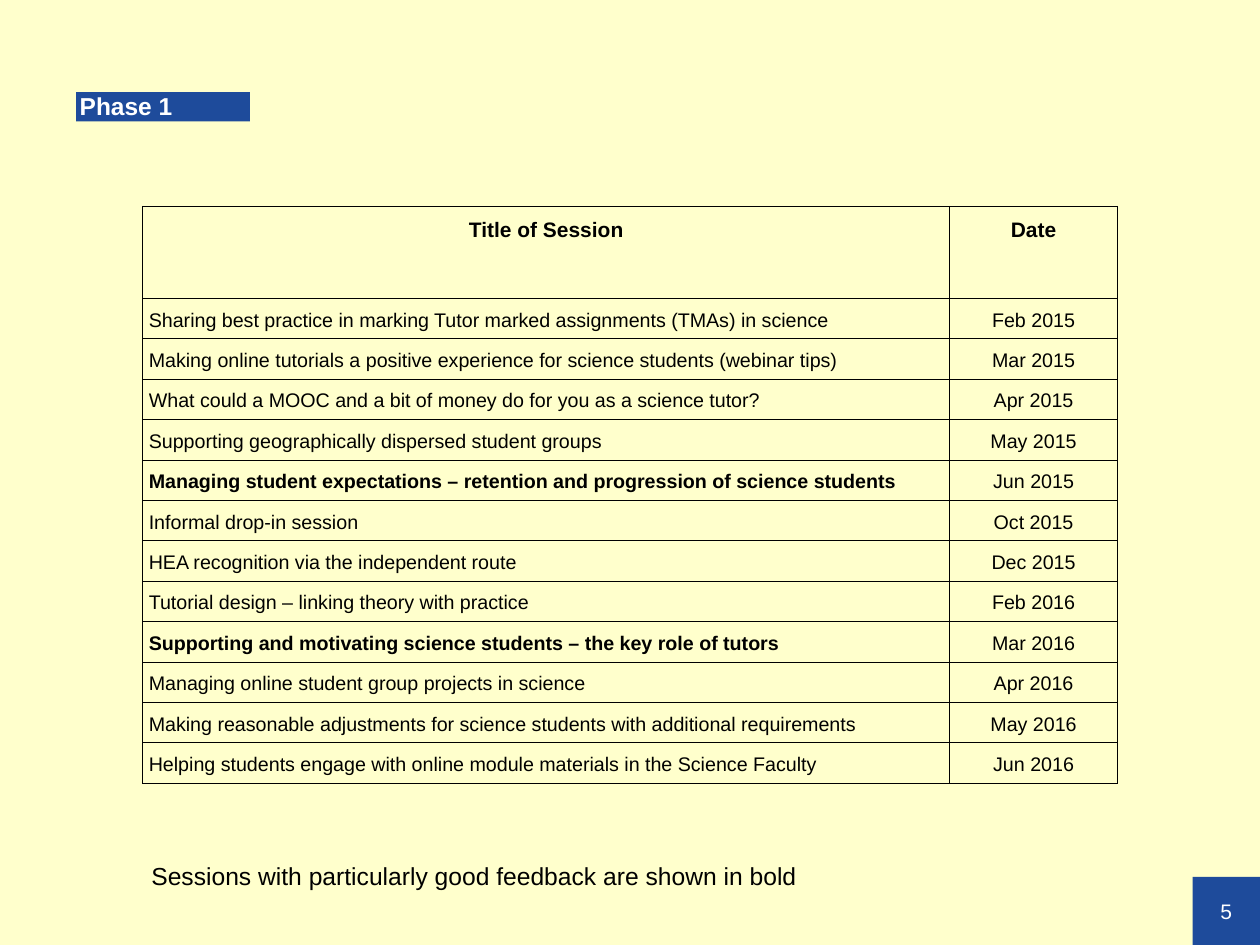
import dataclasses

import pptx
import pptx.dml.color
import pptx.enum.shapes
import pptx.enum.text
import pptx.oxml
import pptx.oxml.ns
import pptx.util

Inches = pptx.util.Inches
ALIGN = pptx.enum.text.PP_ALIGN
ANCHOR = pptx.enum.text.MSO_ANCHOR


@dataclasses.dataclass(frozen=True)
class Theme:
    font: str = "Arial"
    background: str = "FFFFCC"
    accent: str = "1E4B9B"
    light: str = "FFFFFF"
    dark: str = "000000"
    title_size: float = 19.9
    header_size: float = 17
    body_size: float = 16
    note_size: float = 20
    number_size: float = 17.1
    border_width: float = 1


THEME = Theme()

SESSIONS = [
    ("Sharing best practice in marking Tutor marked assignments (TMAs) in science", "Feb 2015", False),
    ("Making online tutorials a positive experience for science students (webinar tips)", "Mar 2015", False),
    ("What could a MOOC and a bit of money do for you as a science tutor?", "Apr 2015", False),
    ("Supporting geographically dispersed student groups", "May 2015", False),
    ("Managing student expectations – retention and progression of science students", "Jun 2015", True),
    ("Informal drop-in session", "Oct 2015", False),
    ("HEA recognition via the independent route", "Dec 2015", False),
    ("Tutorial design – linking theory with practice", "Feb 2016", False),
    ("Supporting and motivating science students – the key role of tutors", "Mar 2016", True),
    ("Managing online student group projects in science", "Apr 2016", False),
    ("Making reasonable adjustments for science students with additional requirements", "May 2016", False),
    ("Helping students engage with online module materials in the Science Faculty", "Jun 2016", False),
]


def rgb(value):
    return pptx.dml.color.RGBColor.from_string(value)


def set_text(frame, text, size, color=THEME.dark, bold=False, align=ALIGN.LEFT, spacing=1.0):
    paragraph = frame.paragraphs[0]
    paragraph.alignment = align
    paragraph.line_spacing = spacing
    run = paragraph.add_run()
    run.text = text
    run.font.name = THEME.font
    run.font.size = pptx.util.Pt(size)
    run.font.bold = bold
    run.font.color.rgb = rgb(color)


def set_margins(target, left=0, top=0, right=0, bottom=0):
    target.margin_left, target.margin_top = Inches(left), Inches(top)
    target.margin_right, target.margin_bottom = Inches(right), Inches(bottom)


def fill_solid(shape, color):
    shape.fill.solid()
    shape.fill.fore_color.rgb = rgb(color)


def add_borders(cell):
    properties = cell._tc.get_or_add_tcPr()
    width = pptx.util.Pt(THEME.border_width)
    for position, side in enumerate(("lnL", "lnR", "lnT", "lnB")):
        properties.insert(position, pptx.oxml.parse_xml(
            f'<a:{side} {pptx.oxml.ns.nsdecls("a")} w="{width}"><a:solidFill>'
            f'<a:srgbClr val="{THEME.dark}"/></a:solidFill></a:{side}>'))


def place_title(slide, left, top, width, height):
    title = slide.shapes.title
    title.left, title.top = Inches(left), Inches(top)
    title.width, title.height = Inches(width), Inches(height)
    fill_solid(title, THEME.accent)
    frame = title.text_frame
    frame.auto_size = pptx.enum.text.MSO_AUTO_SIZE.NONE
    frame.vertical_anchor = ANCHOR.MIDDLE
    set_margins(frame, left=0.04, top=0.02)
    set_text(frame, "Phase 1", THEME.title_size, THEME.light, bold=True, spacing=0.9)


def place_sessions(slide, left, top, width, height, date_width=1.89, header_height=1.04):
    rows = [("Title of Session", "Date", True)] + SESSIONS
    table = slide.shapes.add_table(
        len(rows), 2, Inches(left), Inches(top), Inches(width), Inches(height)).table
    table.horz_banding = False
    table.columns[0].width = Inches(width - date_width)
    table.columns[1].width = Inches(date_width)
    row_height = (height - header_height) / len(SESSIONS)
    for index, (session, date, bold) in enumerate(rows):
        header = index == 0
        table.rows[index].height = Inches(header_height if header else row_height)
        for column, text in enumerate((session, date)):
            cell = table.cell(index, column)
            set_margins(cell, left=0.07, right=0.07)
            cell.fill.background()
            add_borders(cell)
            set_text(cell.text_frame, text,
                     THEME.header_size if header else THEME.body_size,
                     bold=header or (bold and column == 0),
                     align=ALIGN.CENTER if header or column == 1 else ALIGN.LEFT,
                     spacing=1.5)


def place_note(slide, left, top, width, height):
    note = slide.shapes.add_textbox(Inches(left), Inches(top), Inches(width), Inches(height))
    note.text_frame.word_wrap = False
    note.text_frame.auto_size = pptx.enum.text.MSO_AUTO_SIZE.SHAPE_TO_FIT_TEXT
    set_text(note.text_frame, "Sessions with particularly good feedback are shown in bold",
             THEME.note_size)


def place_page_number(slide, left, top, width, height):
    badge = slide.shapes.add_shape(
        pptx.enum.shapes.MSO_SHAPE.RECTANGLE,
        Inches(left), Inches(top), Inches(width), Inches(height))
    badge.shadow.inherit = False
    fill_solid(badge, THEME.accent)
    badge.line.fill.background()
    badge.text_frame.vertical_anchor = ANCHOR.MIDDLE
    set_margins(badge.text_frame)
    set_text(badge.text_frame, "5", THEME.number_size, THEME.light, align=ALIGN.CENTER)


def main():
    presentation = pptx.Presentation()
    presentation.slide_width, presentation.slide_height = Inches(14.22), Inches(10.67)
    slide = presentation.slides.add_slide(presentation.slide_layouts[5])
    fill_solid(slide.background, THEME.background)

    # Page number in the corner
    place_page_number(slide, 13.46, 9.9, 0.76, 0.77)
    # Heading
    place_title(slide, 0.86, 1.04, 1.96, 0.33)
    # Session table and its note
    place_sessions(slide, 1.61, 2.33, 11, 6.52)
    place_note(slide, 1.61, 9.67, 7.54, 0.44)

    presentation.save("out.pptx")


if __name__ == "__main__":
    main()
